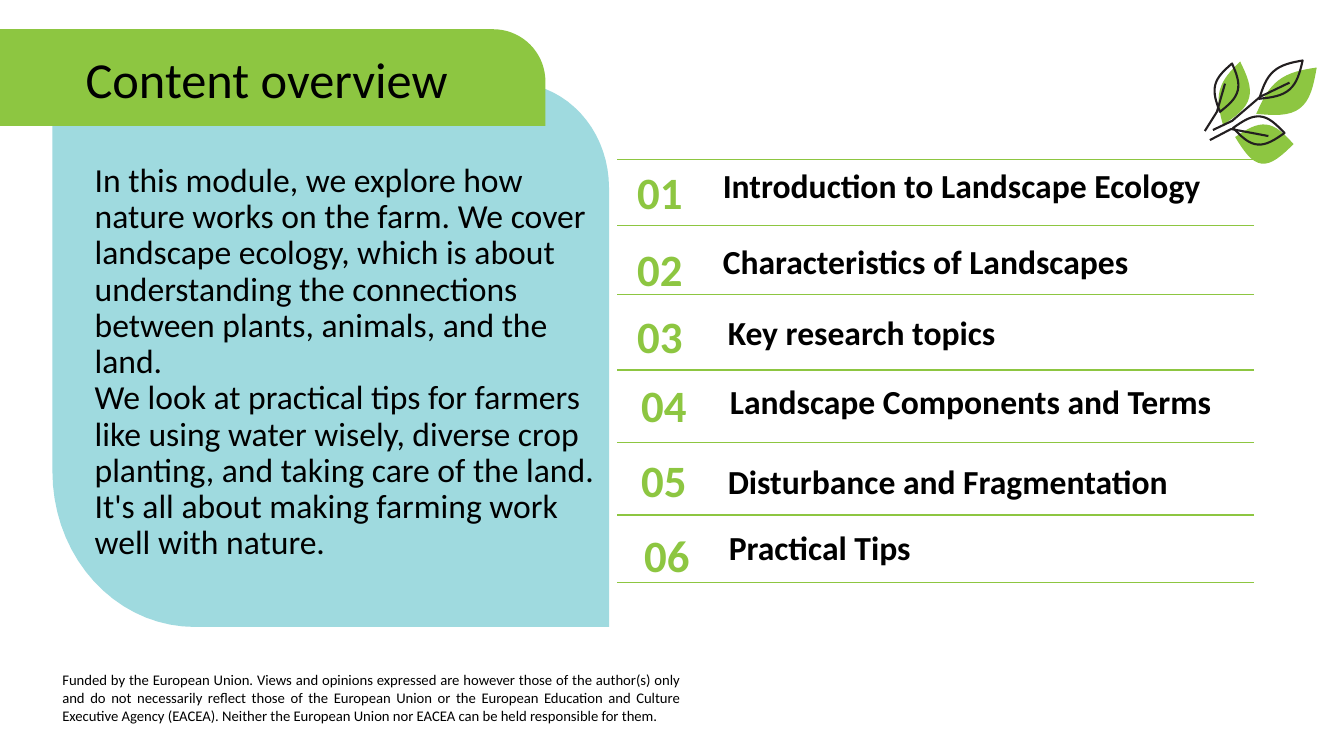
from math import cos, hypot, pi, radians, sin

from lxml.etree import SubElement
from pptx import Presentation
from pptx.dml.color import RGBColor
from pptx.enum.shapes import MSO_CONNECTOR
from pptx.enum.text import MSO_ANCHOR as ANCHOR, PP_ALIGN as ALIGN
from pptx.oxml.ns import qn
from pptx.util import Inches, Pt

SLIDE_WIDTH, SLIDE_HEIGHT = Inches(13.33), Inches(7.5)
COLUMNS, ROWS = 1333, 750  # fine square grid across the slide

GREEN = RGBColor(0x8D, 0xC6, 0x41)
AQUA = RGBColor(0x9F, 0xDA, 0xDF)
INK = RGBColor(0x23, 0x1F, 0x20)
BLACK = RGBColor(0, 0, 0)
FONT = "Calibri"

# base, tip, bulge above the axis, bulge below it
GREEN_LEAVES = [
    ((1213, 124), (1230, 61), 12, 18),
    ((1246, 113), (1306, 67), 13, 22),
    ((1225, 136), (1283, 143), 16, 23),
]
INK_LEAVES = [
    ((1210, 111), (1222, 63), 11, 12),
    ((1249, 98), (1292, 60), 11, 13),
    ((1223, 127), (1274, 132), 14, 14),
]
STEMS = [
    [(1195, 130), (1207, 111), (1215, 83)],
    [(1203, 129), (1222, 120), (1250, 96), (1279, 82)],
    [(1200, 139), (1221, 128), (1258, 135)],
]

RULES = (158, 224, 292, 367, 439, 511, 578)
# number's left and top, title's left and top, title
TOPICS = [
    (616, 156, 707, 149, "Introduction to Landscape Ecology"),
    (616, 232, 707, 224, "Characteristics of Landscapes"),
    (616, 299, 712, 294, "Key research topics"),
    (620, 367, 714, 363, "Landscape Components and Terms"),
    (620, 442, 712, 442, "Disturbance and Fragmentation"),
    (623, 516, 713, 508, "Practical Tips"),
]
INTRO = (
    "In this module, we explore how nature works on the farm. We cover landscape ecology, "
    "which is about understanding the connections between plants, animals, and the land.",
    "We look at practical tips for farmers like using water wisely, diverse crop planting, "
    "and taking care of the land. It's all about making farming work well with nature.",
)
FUNDING = (
    "Funded by the European Union. Views and opinions expressed are however those of the "
    "author(s) only and do not necessarily reflect those of the European Union or the "
    "European Education and Culture Executive Agency (EACEA). Neither the European Union "
    "nor EACEA can be held responsible for them."
)


def across(columns):
    return round(SLIDE_WIDTH * columns / COLUMNS)


def down(rows):
    return round(SLIDE_HEIGHT * rows / ROWS)


def quarter_arc(x, y, radius_x, radius_y, start):
    """Points of a clockwise quarter ellipse around x, y from the start angle."""
    angles = [radians(start + step) for step in range(0, 91, 5)]
    return [(x + radius_x * cos(a), y + radius_y * sin(a)) for a in angles]


def leaf_points(base, tip, above, below, steps=16):
    (x, y), dx, dy = base, tip[0] - base[0], tip[1] - base[1]
    length = hypot(dx, dy)

    def side(bulge):
        offsets = [(k / steps, bulge * sin(pi * k / steps) / length) for k in range(steps)]
        return [(x + dx * t + dy * off, y + dy * t - dx * off) for t, off in offsets]

    return side(above) + [tip] + side(-below)[:0:-1]


def add_outline(slide, points, *, fill=None, line=None, close=True):
    first, *others = [(across(x), down(y)) for x, y in points]
    builder = slide.shapes.build_freeform(*first)
    builder.add_line_segments(others, close=close)
    outline = builder.convert_to_shape()
    outline.shadow.inherit = False
    if fill is None:
        outline.fill.background()
    else:
        outline.fill.solid()
        outline.fill.fore_color.rgb = fill
    if line is None:
        outline.line.fill.background()
    else:
        outline.line.color.rgb = line
        outline.line.width = Pt(1.5)


def add_rule(slide, row):
    rule = slide.shapes.add_connector(MSO_CONNECTOR.STRAIGHT, across(1244), down(row),
                                      across(612), down(row))
    rule.line.color.rgb = GREEN
    rule.line.width = Pt(1)
    SubElement(rule._element.spPr, qn("a:effectLst"))


def add_text(slide, paragraphs, left, top, width, height, *, size, color=BLACK, bold=False,
             align=ALIGN.LEFT, anchor=ANCHOR.MIDDLE, spacing=0.9, indent=0):
    box = slide.shapes.add_textbox(across(left), down(top), across(width), down(height))
    frame = box.text_frame
    frame.word_wrap = True
    frame.vertical_anchor = anchor
    frame.text = "\n".join(paragraphs)
    for paragraph in frame.paragraphs:
        paragraph.alignment = align
        paragraph.line_spacing = spacing
        if indent:
            paragraph._p.get_or_add_pPr().set("marL", str(across(indent)))
        font = paragraph.runs[0].font
        font.name, font.size, font.bold = FONT, Pt(size), bold
        font.color.rgb = color


def add_sprig(slide):
    for leaf in GREEN_LEAVES:
        add_outline(slide, leaf_points(*leaf), fill=GREEN)
    for leaf in INK_LEAVES:
        add_outline(slide, leaf_points(*leaf), line=INK)
    for stem in STEMS:
        add_outline(slide, stem, line=INK, close=False)


def main():
    deck = Presentation()
    deck.slide_width, deck.slide_height = SLIDE_WIDTH, SLIDE_HEIGHT
    slide = deck.slides.add_slide(deck.slide_layouts[6])

    panel = (quarter_arc(508, 186, 96, 104, -90) + [(604, 622)]
             + quarter_arc(193, 468, 141, 154, 90) + [(52, 82)])
    banner = [(0, 29)] + quarter_arc(489, 81, 52, 52, -90) + [(541, 125), (0, 125)]
    add_outline(slide, panel, fill=AQUA)
    add_outline(slide, banner, fill=GREEN)
    add_text(slide, ["Content overview"], 75, 42, 551, 79, size=36)
    add_text(slide, INTRO, 59, 157, 542, 436, size=24, anchor=ANCHOR.TOP, indent=25)

    for row in RULES:
        add_rule(slide, row)
    for index, (left, top, title_left, title_top, title) in enumerate(TOPICS, 1):
        add_text(slide, [f"{index:02}"], left, top, 77, 75, size=32, color=GREEN,
                 bold=True, align=ALIGN.CENTER)
        add_text(slide, [title], title_left, title_top, 545, 75, size=24, bold=True)

    add_sprig(slide)
    add_text(slide, [FUNDING], 52, 661, 633, 66, size=10.5, align=ALIGN.JUSTIFY,
             anchor=ANCHOR.TOP, spacing=1.0)
    deck.save("out.pptx")


if __name__ == "__main__":
    main()
